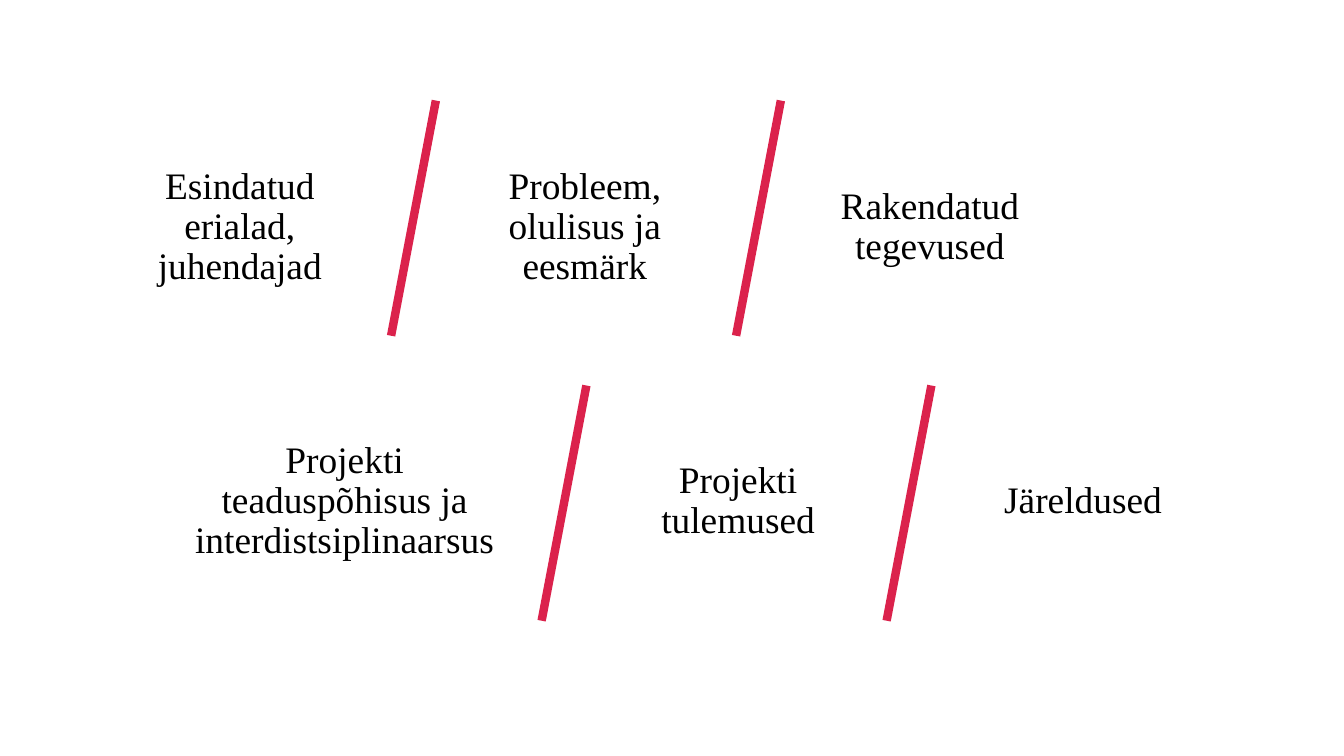
from dataclasses import dataclass

from lxml import etree
from pptx import Presentation
from pptx.dml.color import RGBColor
from pptx.enum.shapes import MSO_CONNECTOR
from pptx.enum.text import MSO_ANCHOR, PP_ALIGN
from pptx.oxml.ns import qn
from pptx.util import Inches, Pt

STRAIGHT = MSO_CONNECTOR.STRAIGHT
MIDDLE = MSO_ANCHOR.MIDDLE
CENTER = PP_ALIGN.CENTER

GRID = 100
PITCH = 25.67
TOPIC_WIDTH = 17.1
WIDE_TOPIC = 24.3
TOPIC_HEIGHT = 19.56
SLASH_LEAN = 3.33
SLASH_HEIGHT = 31.11


@dataclass(frozen=True)
class Theme:
    text: RGBColor = RGBColor(0, 0, 0)
    accent: RGBColor = RGBColor(0xDB, 0x22, 0x4C)
    font: str = "Times New Roman"
    topic_size: Pt = Pt(20)
    slash_width: Pt = Pt(4.5)
    line_spacing: float = 0.9


@dataclass(frozen=True)
class AgendaRow:
    topics: tuple
    first_right: float
    topic_top: float
    first_slash: float
    slash_top: float
    first_width: float = TOPIC_WIDTH


AGENDA = (
    AgendaRow(
        ("Esindatud erialad, juhendajad", "Probleem, olulisus ja eesmärk", "Rakendatud tegevused"),
        first_right=26.4, topic_top=20.3, first_slash=29.1, slash_top=13.3,
    ),
    AgendaRow(
        ("Projekti teaduspõhisus ja interdistsiplinaarsus", "Projekti tulemused", "Järeldused"),
        first_right=37.8, topic_top=56.55, first_slash=40.3, slash_top=51,
        first_width=WIDE_TOPIC,
    ),
)


class AgendaSlide:
    def __init__(self, deck, theme):
        self.theme = theme
        self.slide = deck.slides.add_slide(deck.slide_layouts[6])
        self.column = deck.slide_width / GRID
        self.row = deck.slide_height / GRID

    def x(self, columns):
        return round(columns * self.column)

    def y(self, rows):
        return round(rows * self.row)

    def topic(self, wording, right, top, width):
        box = self.slide.shapes.add_textbox(
            self.x(right - width), self.y(top), self.x(width), self.y(TOPIC_HEIGHT)
        )
        frame = box.text_frame
        frame.word_wrap = True
        frame.vertical_anchor = MIDDLE
        frame.text = wording
        paragraph = frame.paragraphs[0]
        paragraph.alignment = CENTER
        paragraph.line_spacing = self.theme.line_spacing
        font = paragraph.runs[0].font
        font.name = self.theme.font
        font.size = self.theme.topic_size
        font.color.rgb = self.theme.text

    def slash(self, foot, top):
        stroke = self.slide.shapes.add_connector(
            STRAIGHT, self.x(foot), self.y(top + SLASH_HEIGHT),
            self.x(foot + SLASH_LEAN), self.y(top)
        )
        stroke.line.color.rgb = self.theme.accent
        stroke.line.width = self.theme.slash_width
        etree.SubElement(stroke._element.spPr, qn("a:effectLst"))

    def agenda_row(self, agenda):
        for index, wording in enumerate(agenda.topics):
            width = TOPIC_WIDTH if index else agenda.first_width
            self.topic(wording, agenda.first_right + index * PITCH, agenda.topic_top, width)
        for index in range(len(agenda.topics) - 1):
            self.slash(agenda.first_slash + index * PITCH, agenda.slash_top)


def main():
    deck = Presentation()
    deck.slide_width = Inches(10)
    deck.slide_height = deck.slide_width * 9 // 16
    overview = AgendaSlide(deck, Theme())
    for agenda in AGENDA:
        overview.agenda_row(agenda)
    deck.save("out.pptx")


if __name__ == "__main__":
    main()
